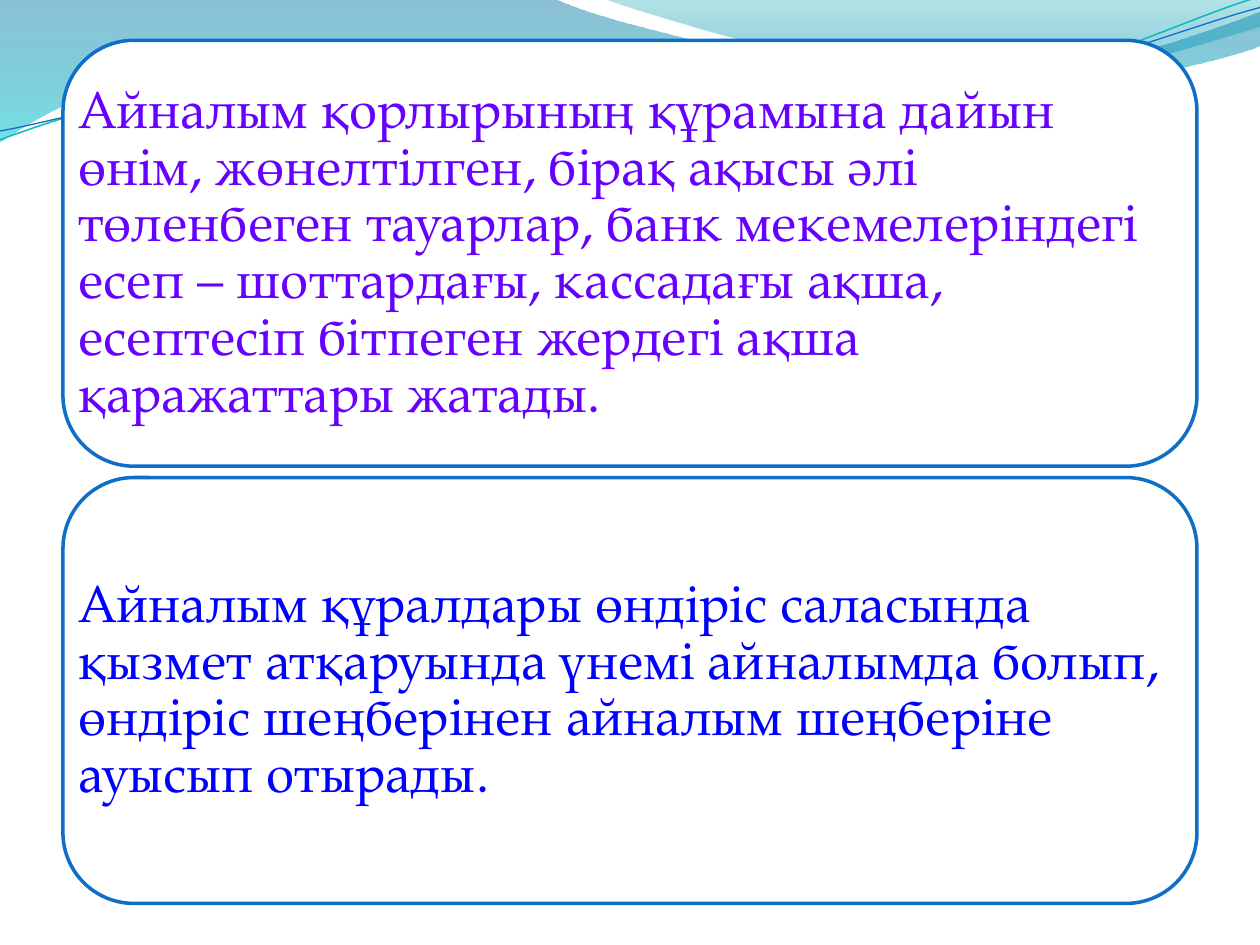
import pptx
import pptx.dml.color
import pptx.enum.shapes
import pptx.enum.text
import pptx.oxml
import pptx.oxml.ns
import pptx.util
from pptx.util import Inches


def rgb(value):
    return pptx.dml.color.RGBColor.from_string(value)


def add_outline(start, segments, close):
    """Draw a freeform in inches; 2 numbers are a line, 6 a cubic curve."""
    corners = [(Inches(x), Inches(y)) for segment in [start, *segments]
               for x, y in zip(segment[::2], segment[1::2])]
    builder = slide.shapes.build_freeform(*corners[0])
    builder.add_line_segments(corners[1:], close=close)
    outline = builder.convert_to_shape()
    outline.shadow.inherit = False

    # Join each run of three line points into one cubic curve
    lines = iter(list(outline._element.iter(pptx.oxml.ns.qn("a:lnTo"))))
    for segment in segments:
        first = next(lines)
        if len(segment) == 6:
            cubic = pptx.oxml.parse_xml(f'<a:cubicBezTo {pptx.oxml.ns.nsdecls("a")}/>')
            first.addprevious(cubic)
            for line in (first, next(lines), next(lines)):
                cubic.append(line[0])
                line.getparent().remove(line)
    return outline


prs = pptx.Presentation()
prs.slide_width, prs.slide_height = Inches(10), Inches(7.5)
slide = prs.slides.add_slide(prs.slide_layouts[6])

# Translucent waves along the top: start, segments, (position, colour, alpha %)
waves = [
    ((0, 0),
     [(4.4, -0.01), (4.76, 0.17, 6.64, 0.63, 7.58, 0.63),
      (8.53, 0.63, 9.58, 0.26, 10, 0.09), (10.01, 0.36),
      (9.83, 0.44, 8.7, 0.76, 7.46, 0.75), (6.22, 0.75, 3.82, 0.28, 2.57, 0.34),
      (1.29, 0.36, 0.46, 0.83, -0.01, 1.13)],
     [(0, "0074A1", 45), (1, "00C6CF", 55)]),
    ((4.79, -0.01),
     [(5.09, 0.11, 6.82, 0.62, 7.69, 0.65), (8.56, 0.69, 9.61, 0.32, 10, 0.21),
      (10, 0)],
     [(0, "00A1A9", 30), (0.8, "008BBF", 45)]),
]
for start, segments, stops in waves:
    wave = add_outline(start, segments, close=True)
    wave.line.fill.background()
    wave.fill.gradient()
    wave.fill.gradient_angle = 270
    for stop, (position, colour, _) in zip(wave.fill.gradient_stops, stops):
        stop.position = position
        stop.color.rgb = rgb(colour)
    colour_nodes = wave._element.spPr.iter(pptx.oxml.ns.qn("a:srgbClr"))
    for node, (_, _, alpha) in zip(colour_nodes, stops):
        opacity = pptx.oxml.parse_xml(f'<a:alpha {pptx.oxml.ns.nsdecls("a")} val="{alpha * 1000}"/>')
        node.append(opacity)

# Thin curves following the waves
curves = [
    ((0, 1.11),
     [(0.48, 0.93, 1.58, 0.57, 2.77, 0.52), (3.95, 0.47, 5.93, 0.89, 7.13, 0.8),
      (8.33, 0.71, 9.38, 0.15, 9.98, -0.02)], "0AB8BF", 0.85),
    ((0, 1.04),
     [(0.47, 0.96, 1.64, 0.61, 2.83, 0.56), (4.03, 0.51, 5.97, 0.84, 7.17, 0.75),
      (8.36, 0.67, 9.41, 0.21, 10, 0.06)], "0F6FC6", 0.75),
]
for start, segments, colour, width in curves:
    curve = add_outline(start, segments, close=False)
    curve.fill.background()
    curve.line.color.rgb = rgb(colour)
    curve.line.width = pptx.util.Pt(width)

# Two stacked statements
statements = [
    ("Айналым қорлырының құрамына дайын өнім, жөнелтілген, бірақ ақысы әлі "
     "төленбеген тауарлар, банк мекемелеріндегі есеп – шоттардағы, кассадағы ақша, "
     "есептесіп бітпеген жердегі ақша қаражаттары жатады.", "6600FF"),
    ("Айналым құралдары өндіріс саласында қызмет атқаруында үнемі айналымда болып, "
     "өндіріс шеңберінен айналым шеңберіне ауысып отырады.", "0000FF"),
]
for row, (statement, colour) in enumerate(statements):
    area = Inches(0.5), Inches(0.32 + 3.47 * row), Inches(9), Inches(3.38)
    panel = slide.shapes.add_shape(pptx.enum.shapes.MSO_SHAPE.ROUNDED_RECTANGLE, *area)
    panel.shadow.inherit = False
    panel.fill.solid()
    panel.fill.fore_color.rgb = rgb("FFFFFF")
    panel.line.color.rgb = rgb("0F6FC6")
    panel.line.width = pptx.util.Pt(2)

    # The text spans the whole panel, without the inset of its round corners
    frame = slide.shapes.add_textbox(*area).text_frame
    frame.word_wrap = True
    frame.vertical_anchor = pptx.enum.text.MSO_ANCHOR.MIDDLE
    frame.margin_left = frame.margin_right = Inches(0.12)
    frame.margin_top = frame.margin_bottom = Inches(0.12)
    paragraph = frame.paragraphs[0]
    paragraph.text = statement
    paragraph.line_spacing = 0.9
    paragraph.font.name = "TeX Gyre Pagella"
    paragraph.font.size = pptx.util.Pt(30)
    paragraph.font.color.rgb = rgb(colour)

prs.save("out.pptx")
